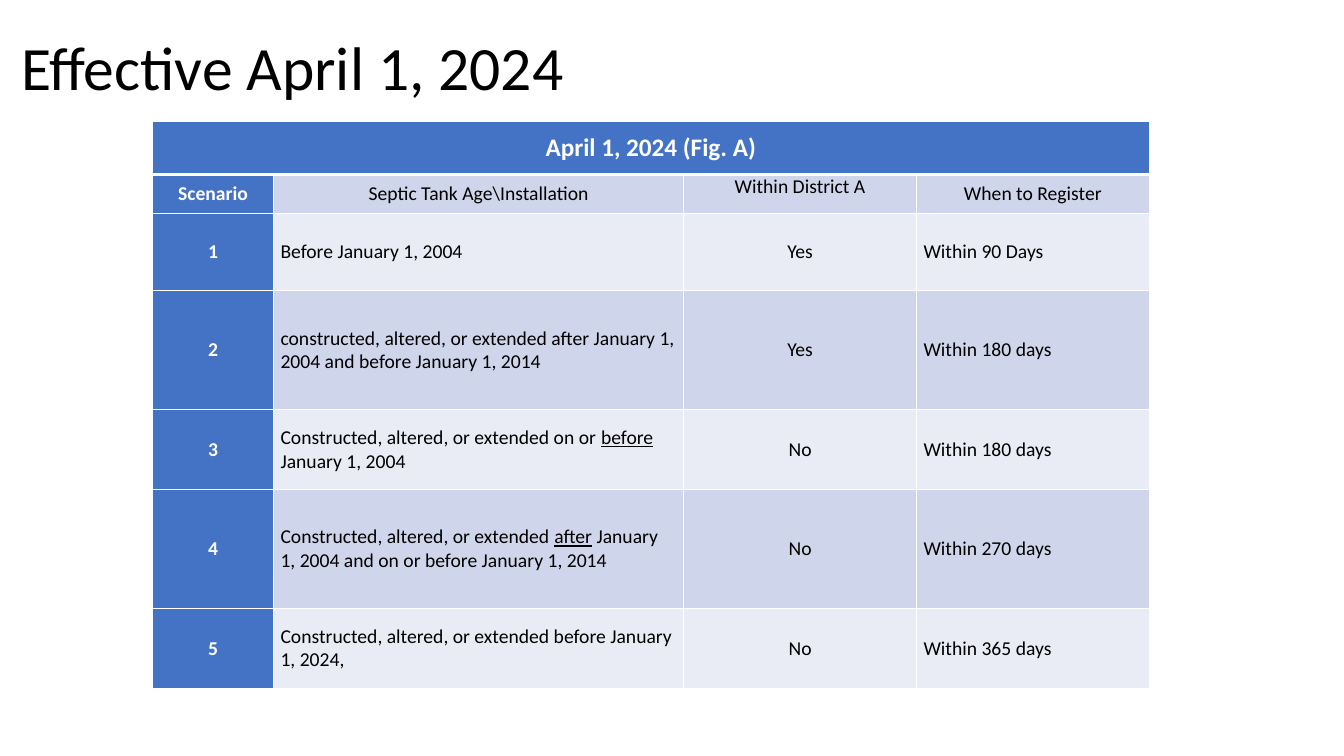
"""Build the slide with the table of septic tank registration deadlines."""
from lxml import etree
from pptx import Presentation
from pptx.dml.color import RGBColor
from pptx.enum import text
from pptx.oxml import ns
from pptx.util import Pt

COLORS = {"accent": "4472C4", "dark_band": "CFD5EA", "light_band": "E9EBF5",
          "white": "FFFFFF", "black": "000000"}
FONT = "Calibri"
WIDTHS = [86.4, 293, 166.3, 166.3]
HEIGHTS = [38, 28, 55, 85, 57, 85, 57]
ROWS = [
    ["April 1, 2024 (Fig. A)", "", "", ""],
    ["Scenario", "Septic Tank Age\\Installation", "Within District A", "When to Register"],
    ["1", "Before January 1, 2004", "Yes", "Within 90 Days"],
    ["2", "constructed, altered, or extended after January 1, 2004 and before January 1, 2014",
     "Yes", "Within 180 days"],
    ["3", "Constructed, altered, or extended on or _before_ January 1, 2004",
     "No", "Within 180 days"],
    ["4", "Constructed, altered, or extended _after_ January 1, 2004 and on or before January 1, 2014",
     "No", "Within 270 days"],
    ["5", "Constructed, altered, or extended before January 1, 2024,", "No", "Within 365 days"],
]


def set_font(p, size, color, bold=False):
    p.font.name = FONT
    p.font.size = Pt(size)
    p.font.bold = bold
    p.font.color.rgb = RGBColor.from_string(COLORS[color])


def add_border(cell, side, width):
    tc_pr = cell._tc.get_or_add_tcPr()
    ln = etree.SubElement(tc_pr, ns.qn(f"a:ln{side}"), w=str(Pt(width)))
    fill = etree.SubElement(ln, ns.qn("a:solidFill"))
    etree.SubElement(fill, ns.qn("a:srgbClr"), val=COLORS["white"])


prs = Presentation()
prs.slide_width, prs.slide_height = Pt(960), Pt(540)
slide = prs.slides.add_slide(prs.slide_layouts[5])

title = slide.shapes.title
title.left, title.top, title.width, title.height = Pt(8), Pt(-1.5), Pt(828), Pt(104.4)
tf = title.text_frame
tf.text = "Effective April 1, 2024"
tf.vertical_anchor = text.MSO_ANCHOR.MIDDLE
p = tf.paragraphs[0]
p.alignment = text.PP_ALIGN.LEFT
p.line_spacing = 0.9
set_font(p, 44, "black")

table = slide.shapes.add_table(len(ROWS), len(WIDTHS), Pt(109), Pt(86.7),
                               Pt(sum(WIDTHS)), Pt(sum(HEIGHTS))).table
for column, width in zip(table.columns, WIDTHS):
    column.width = Pt(width)
for row, height in zip(table.rows, HEIGHTS):
    row.height = Pt(height)
table.cell(0, 0).merge(table.cell(0, len(WIDTHS) - 1))

for i, values in enumerate(ROWS):
    for j, value in enumerate(values):
        cell = table.cell(i, j)
        heading = i == 0 or j == 0
        for side in "LRTB":
            thick = (i, side) in [(0, "B"), (1, "T")]
            add_border(cell, side, 3 if thick else 1)
        band = "dark_band" if i % 2 else "light_band"
        cell.fill.solid()
        cell.fill.fore_color.rgb = RGBColor.from_string(COLORS["accent" if heading else band])
        cell.margin_left = cell.margin_right = Pt(5)
        cell.margin_top = cell.margin_bottom = 0
        top = (i, j) == (1, 2)
        cell.vertical_anchor = text.MSO_ANCHOR.TOP if top else text.MSO_ANCHOR.MIDDLE
        p = cell.text_frame.paragraphs[0]
        centered = i < 2 or j in (0, 2)
        p.alignment = text.PP_ALIGN.CENTER if centered else text.PP_ALIGN.LEFT
        p.space_after = Pt(12)
        set_font(p, 18 if i == 0 else 14, "white" if heading else "black", heading)
        if value:
            for k, part in enumerate(value.split("_")):
                r = p.add_run()
                r.text = part
                if k % 2:
                    r.font.underline = True

prs.save("out.pptx")
